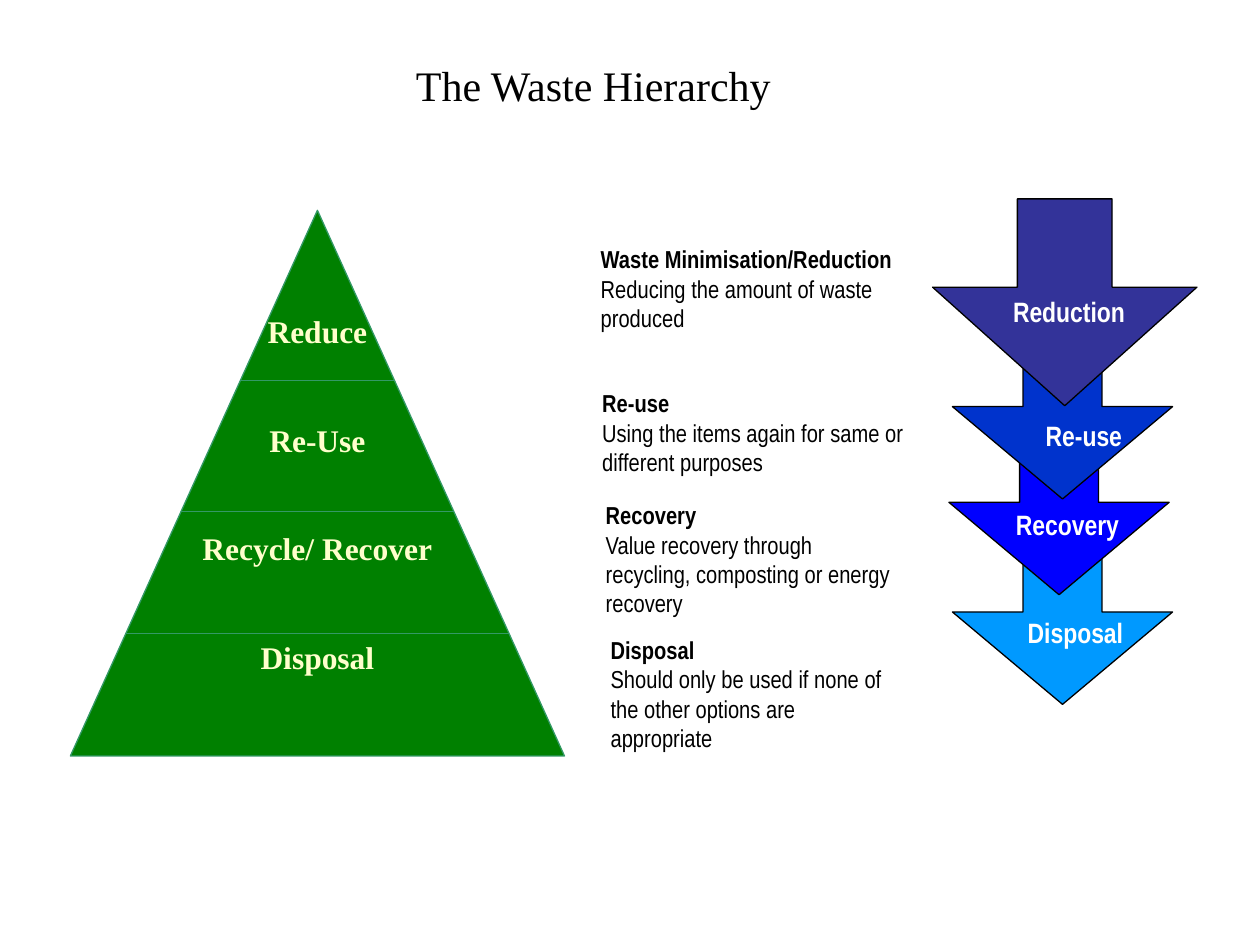
import pptx
import pptx.util
import pptx.dml.color
import pptx.enum.shapes
import pptx.enum.text
import pptx.oxml.ns
from lxml import etree

Cm, Pt = pptx.util.Cm, pptx.util.Pt
SHAPE = pptx.enum.shapes.MSO_SHAPE
ALIGN = pptx.enum.text.PP_ALIGN
ANCHOR = pptx.enum.text.MSO_ANCHOR

COLOURS = {
    "text": "000000", "paper": "FFFFFF", "cream": "FFFFCC",
    "pyramid": "008000", "pyramid edge": "339966",
    "Reduction": "333399", "Re-use": "0033CC",
    "Recovery": "0000FF", "Disposal": "0099FF",
}
SERIF, NARROW = "Times New Roman", "Arial Narrow"

LEVELS = ["Reduce", "Re-Use", "Recycle/ Recover", "Disposal"]
DIVIDERS = [3.43, 6.07, 8.53]

# Name, arrow box and label corner, in cm from the corner of the region
ARROWS = [
    ("Reduction", (0, 0, 5.33, 4.17), (0.86, 1.81)),
    ("Re-use", (0.4, 2.8, 4.44, 3.25), (1.16, 4.3)),
    ("Recovery", (0.33, 4.73, 4.44, 3.25), (0.83, 6.1)),
    ("Disposal", (0.4, 6.94, 4.44, 3.25), (0.99, 8.28)),
]

DESCRIPTIONS = [
    ("Waste Minimisation/Reduction", "Reducing the amount of waste produced",
     (0, 0, 6.78, 1.96)),
    ("Re-use", "Using the items again for same or different purposes",
     (0.03, 2.9, 6.6, 2.01)),
    ("Recovery", "Value recovery through recycling, composting or energy recovery",
     (0.1, 5.16, 6.4, 2.57)),
    ("Disposal", "Should only be used if none of the other options are appropriate",
     (0.2, 7.87, 6.17, 2.57)),
]


def colour(name):
    return pptx.dml.color.RGBColor.from_string(COLOURS[name])


def cms(*lengths):
    return [Cm(length) for length in lengths]


def add_span(para, text, size, font, tint, bold=False):
    span = para.add_run()
    span.text = text
    span.font.size = Pt(size)
    span.font.name = font
    span.font.bold = bold
    span.font.color.rgb = colour(tint)


def write_lines(frame, lines, size, font, tint, align, gap=0):
    """Write (text, bold) lines as paragraphs, with gap points between them."""
    frame.word_wrap = True
    frame.vertical_anchor = ANCHOR.TOP
    for index, (text, bold) in enumerate(lines):
        para = frame.add_paragraph() if index else frame.paragraphs[0]
        para.alignment = align
        para.space_before = Pt(gap if index else 0)
        add_span(para, text, size, font, tint, bold)


def add_filled(page, kind, box, fill, line=None):
    shape = page.shapes.add_shape(kind, *cms(*box))
    shape.shadow.inherit = False
    shape.fill.solid()
    shape.fill.fore_color.rgb = colour(fill)
    if line:
        shape.line.color.rgb = colour(line)
        shape.line.width = Pt(0.75)
    else:
        shape.line.fill.background()
    return shape


def add_title(page, box):
    title = page.shapes.title
    title.left, title.top, title.width, title.height = cms(*box)
    frame = title.text_frame
    frame.auto_size = pptx.enum.text.MSO_AUTO_SIZE.NONE
    write_lines(frame, [("The Waste Hierarchy", False)],
                24, SERIF, "text", ALIGN.CENTER)
    frame.vertical_anchor = ANCHOR.MIDDLE


def add_pyramid(page, box):
    left, top, width, height = box
    add_filled(page, SHAPE.ISOSCELES_TRIANGLE, box, "pyramid", "pyramid edge")
    middle = left + width / 2
    for depth in DIVIDERS:
        half = width / 2 * depth / height
        line = page.shapes.add_connector(
            pptx.enum.shapes.MSO_CONNECTOR.STRAIGHT,
            *cms(middle - half, top + depth, middle + half, top + depth))
        line.line.color.rgb = colour("pyramid edge")
        line.line.width = Pt(0.75)
        etree.SubElement(line._element.spPr, pptx.oxml.ns.qn("a:effectLst"))
    label_width = 5.51
    labels = page.shapes.add_textbox(
        *cms(middle - label_width / 2, top + 1.93, label_width, 7.9))
    write_lines(labels.text_frame, [(level, True) for level in LEVELS],
                18, SERIF, "cream", ALIGN.CENTER, gap=40.4)


def add_descriptions(page, left, top):
    for heading, detail, (x, y, width, height) in DESCRIPTIONS:
        panel = add_filled(page, SHAPE.RECTANGLE,
                           (left + x, top + y, width, height), "paper")
        write_lines(panel.text_frame, [(heading, True), (detail, False)],
                    14, NARROW, "text", ALIGN.LEFT)


def add_arrows(page, left, top):
    """Stack the arrows from the bottom up, so each one overlaps the next."""
    for name, (x, y, width, height), (label_x, label_y) in reversed(ARROWS):
        arrow = add_filled(page, SHAPE.DOWN_ARROW,
                           (left + x, top + y, width, height), name, "text")
        arrow.adjustments[0] = 0.358
        arrow.adjustments[1] = 0.573
        label = page.shapes.add_textbox(
            *cms(left + label_x, top + label_y, 3.78, 1.19))
        write_lines(label.text_frame, [(name, True)],
                    16, NARROW, "paper", ALIGN.CENTER)


def main():
    deck = pptx.Presentation()
    deck.slide_width, deck.slide_height = cms(25.4, 19.05)
    page = deck.slides.add_slide(deck.slide_layouts.get_by_name("Title Only"))
    page.background.fill.solid()
    page.background.fill.fore_color.rgb = colour("paper")
    add_title(page, (2.54, 1.07, 18.85, 1.27))
    add_arrows(page, 18.8, 4.01)
    add_descriptions(page, 11.86, 4.8)
    add_pyramid(page, (1.42, 4.24, 9.96, 11))
    deck.save("out.pptx")


if __name__ == "__main__":
    main()
